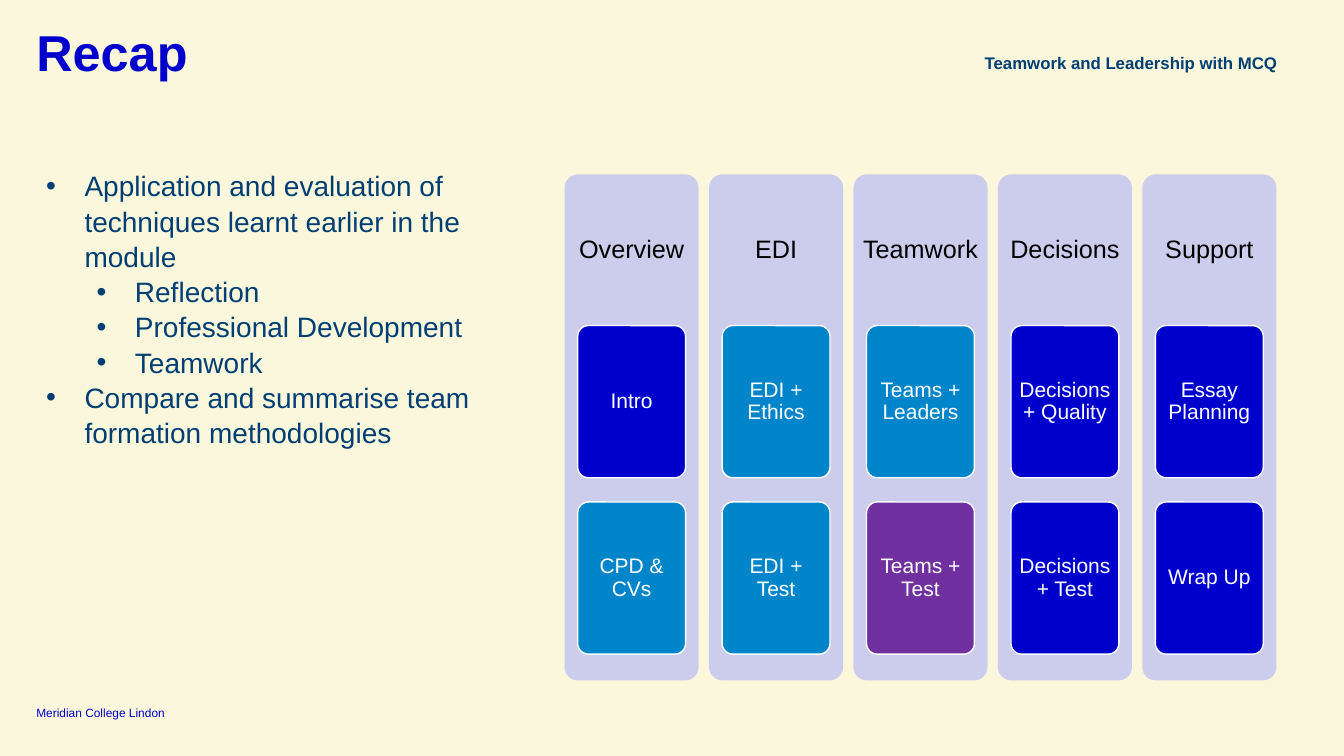
from pptx import Presentation
from pptx import util as u
from pptx.dml.color import RGBColor
from pptx.enum import shapes, text
from pptx.oxml.ns import qn
from lxml import etree

CREAM = RGBColor(0xFB, 0xF7, 0xDC)
NAVY = RGBColor(0x00, 0x3E, 0x74)
BLUE = RGBColor(0x00, 0x00, 0xCD)
SKY = RGBColor(0x00, 0x85, 0xCA)
PURPLE = RGBColor(0x70, 0x30, 0xA0)
LILAC = RGBColor(0xCC, 0xCC, 0xED)
WHITE = RGBColor(0xFF, 0xFF, 0xFF)
BLACK = RGBColor(0x00, 0x00, 0x00)

prs = Presentation()
prs.slide_width, prs.slide_height = u.Inches(13.33), u.Inches(7.5)
s = prs.slides.add_slide(prs.slide_layouts[6])
s.background.fill.solid()
s.background.fill.fore_color.rgb = CREAM


def write(sp, lines, size, color, bold=False, align=text.PP_ALIGN.LEFT,
          anchor=text.MSO_ANCHOR.TOP, inset=(0, 0), spacing=1.0):
    tf = sp.text_frame
    tf.text = lines
    tf.word_wrap = True
    tf.vertical_anchor = anchor
    tf.margin_left = tf.margin_right = u.Inches(inset[0])
    tf.margin_top = tf.margin_bottom = u.Inches(inset[1])
    for p in tf.paragraphs:
        p.alignment, p.line_spacing = align, spacing
        for r in p.runs:
            r.font.name, r.font.size, r.font.bold = "Arial", u.Pt(size), bold
            r.font.color.rgb = color
    return tf


def rounded(x, y, w, h, color):
    sp = s.shapes.add_shape(shapes.MSO_SHAPE.ROUNDED_RECTANGLE,
                            u.Inches(x), u.Inches(y), u.Inches(w), u.Inches(h))
    sp.adjustments[0] = 0.1
    sp.shadow.inherit = False
    sp.fill.solid()
    sp.fill.fore_color.rgb = color
    sp.line.fill.background()
    return sp


# Footer, title and session name
margin = u.Inches(0.36)
sp = s.shapes.add_textbox(margin, u.Inches(6.99), u.Inches(1.55), u.Inches(0.15))
write(sp, "Meridian College Lindon", 8.5, BLUE, anchor=text.MSO_ANCHOR.BOTTOM)
sp = s.shapes.add_textbox(margin, u.Inches(0.28), u.Inches(12.62), u.Inches(0.41))
write(sp, "Recap", 36, BLUE, bold=True, spacing=0.9)
sp = s.shapes.add_textbox(u.Inches(9.25), u.Inches(0.51), u.Inches(3.42), u.Inches(0.34))
write(sp, "Teamwork and Leadership with MCQ", 12, NAVY, bold=True,
      align=text.PP_ALIGN.RIGHT, spacing=1.05)

# Bulleted aims, each with its level
aims = [
    ("Application and evaluation of techniques learnt earlier in the module", 0),
    ("Reflection", 1),
    ("Professional Development", 1),
    ("Teamwork", 1),
    ("Compare and summarise team formation methodologies", 0),
]
sp = s.shapes.add_textbox(margin, u.Inches(1.61), u.Inches(4.68), u.Inches(3.1))
tf = write(sp, "\n".join(aim for aim, level in aims), 20, NAVY,
           inset=(0.1, 0.05), spacing=1.05)
for p, (aim, level) in zip(tf.paragraphs, aims):
    p.level = level
    pPr = p._p.get_or_add_pPr()
    pPr.set("marL", str(u.Inches(0.38 + 0.5 * level)))
    pPr.set("indent", str(u.Inches(-0.38)))
    etree.SubElement(pPr, qn("a:buFont")).set("typeface", "Arial")
    etree.SubElement(pPr, qn("a:buChar")).set("char", "•")

# Module plan: one column per topic, two sessions in each
topics = [
    ("Overview", [("Intro", BLUE), ("CPD & CVs", SKY)]),
    ("EDI", [("EDI + Ethics", SKY), ("EDI + Test", SKY)]),
    ("Teamwork", [("Teams + Leaders", SKY), ("Teams + Test", PURPLE)]),
    ("Decisions", [("Decisions + Quality", BLUE), ("Decisions + Test", BLUE)]),
    ("Support", [("Essay Planning", BLUE), ("Wrap Up", BLUE)]),
]
left, top, col_w, col_h, col_step = 5.6, 1.73, 1.33, 5.02, 1.4325
card_w, card_h, card_top, card_step = 1.07, 1.51, 3.23, 1.75
centred = dict(align=text.PP_ALIGN.CENTER, anchor=text.MSO_ANCHOR.MIDDLE, spacing=0.9)

for col, (topic, sessions) in enumerate(topics):
    x = left + col * col_step
    rounded(x, top, col_w, col_h, LILAC)
    sp = s.shapes.add_textbox(u.Inches(x), u.Inches(top), u.Inches(col_w), u.Inches(card_h))
    write(sp, topic, 18, BLACK, inset=(0.07, 0.07), **centred)
    for row, (session, color) in enumerate(sessions):
        sp = rounded(x + (col_w - card_w) / 2, card_top + row * card_step,
                     card_w, card_h, color)
        sp.line.color.rgb = WHITE
        sp.line.width = u.Pt(1)
        write(sp, session, 15, WHITE, inset=(0.04, 0.03), **centred)

prs.save("out.pptx")
